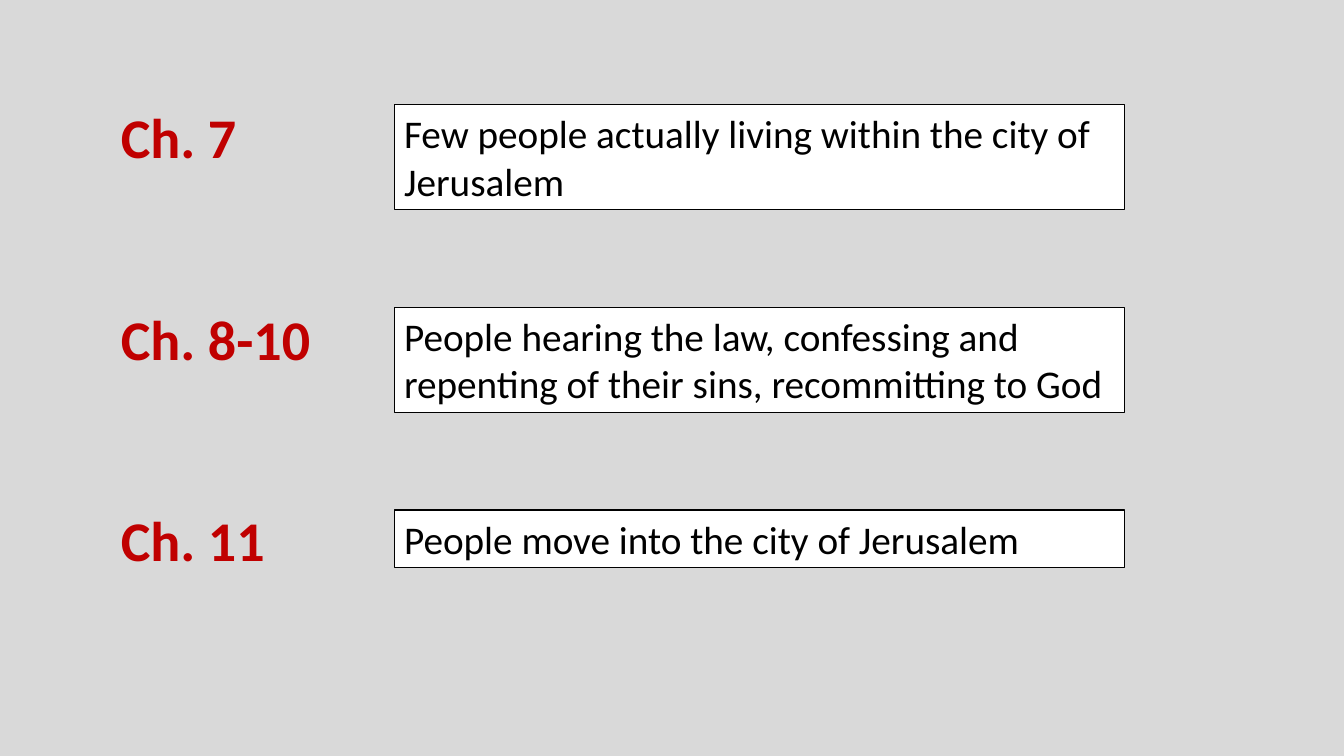
from pptx import Presentation
from pptx.dml.color import RGBColor
from pptx.enum.shapes import MSO_SHAPE
from pptx.enum.text import MSO_ANCHOR, PP_ALIGN
from pptx.util import Inches, Pt

RECTANGLE = MSO_SHAPE.RECTANGLE
TOP = MSO_ANCHOR.TOP
LEFT = PP_ALIGN.LEFT

# Content: chapter, summary, height of the summary box
CHAPTERS = [
    ("Ch. 7", "Few people actually living within the city of Jerusalem", 1.04),
    ("Ch. 8-10", "People hearing the law, confessing and repenting of their sins, "
                 "recommitting to God", 1.04),
    ("Ch. 11", "People move into the city of Jerusalem", 0.57),
]

# Layout and formats
LABEL_AREA = (1.1, 0.97, 3.43, 4.81)
LABEL_GAP = 96
BOX_LEFT, BOX_TOP, BOX_WIDTH = 3.91, 1.04, 7.24
ROW_PITCH = 2.01


def color(value):
    return RGBColor.from_string(value)


LABEL_FONT = {"name": "Calibri", "size": Pt(40), "bold": True}
SUMMARY_FONT = {"name": "Calibri", "size": Pt(28)}


def write(para, text, font_format, font_color):
    para.alignment = LEFT
    span = para.add_run()
    span.text = text
    for name, value in font_format.items():
        setattr(span.font, name, value)
    span.font.color.rgb = color(font_color)


deck = Presentation()
deck.slide_width, deck.slide_height = Inches(13.33), Inches(7.5)
page = deck.slides.add_slide(deck.slide_layouts[6])
page.background.fill.solid()
page.background.fill.fore_color.rgb = color("D9D9D9")

# Chapter labels: one column, spaced to the rows
labels = page.shapes.add_textbox(*map(Inches, LABEL_AREA)).text_frame
labels.word_wrap = True

for row, (chapter, summary, height) in enumerate(CHAPTERS):
    para = labels.add_paragraph() if row else labels.paragraphs[0]
    para.space_before = Pt(LABEL_GAP if row else 0)
    write(para, chapter, LABEL_FONT, "C00000")

    # Summary box
    area = (BOX_LEFT, BOX_TOP + row * ROW_PITCH, BOX_WIDTH, height)
    box = page.shapes.add_shape(RECTANGLE, *map(Inches, area))
    box.shadow.inherit = False
    box.fill.solid()
    box.fill.fore_color.rgb = color("FFFFFF")
    box.line.color.rgb = color("000000")
    box.line.width = Pt(0.75)
    box.text_frame.word_wrap = True
    box.text_frame.vertical_anchor = TOP
    write(box.text_frame.paragraphs[0], summary, SUMMARY_FONT, "000000")

deck.save("out.pptx")
